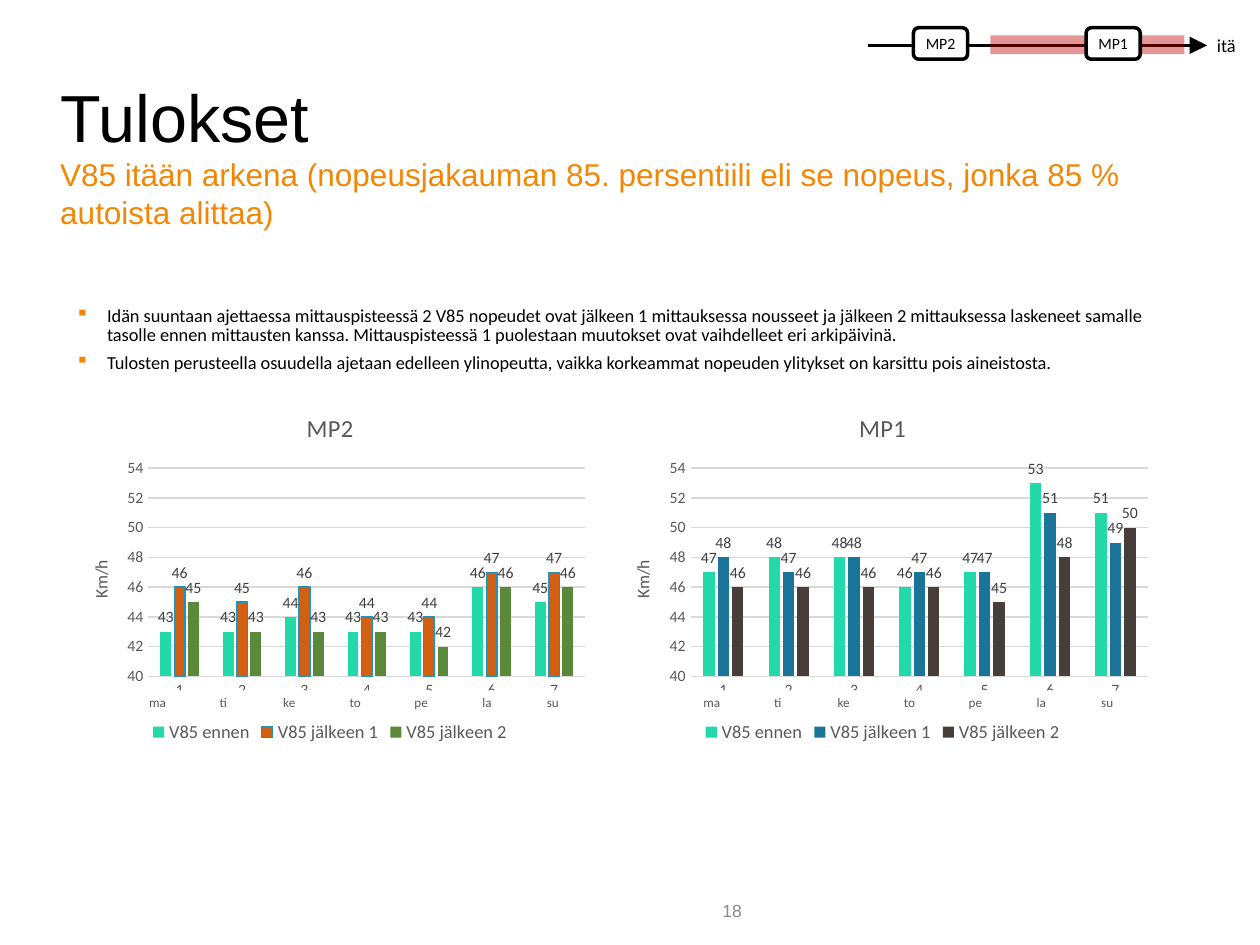
from lxml.etree import SubElement
from pptx import Presentation
from pptx.chart.data import CategoryChartData
from pptx.dml.color import RGBColor
from pptx.enum.chart import XL_CHART_TYPE as ChartType
from pptx.enum.chart import XL_LABEL_POSITION as LabelPosition
from pptx.enum.chart import XL_LEGEND_POSITION as LegendPosition
from pptx.enum.chart import XL_TICK_MARK as TickMark
from pptx.enum.shapes import MSO_CONNECTOR as Connector
from pptx.enum.shapes import MSO_SHAPE as Shape
from pptx.enum.text import MSO_ANCHOR as Anchor
from pptx.enum.text import PP_ALIGN as Align
from pptx.oxml.ns import qn
from pptx.util import Inches, Pt

COLORS = {
    "black": "000000", "white": "FFFFFF", "orange": "F28705", "red": "C00000",
    "number": "898989", "axis": "595959", "label": "404040", "grid": "D9D9D9",
    "mint": "23D9AA", "rust": "D26012", "green": "5A8A39",
    "blue": "1A7599", "brown": "473D39", "outline": "2192BF",
}
RGB = {name: RGBColor.from_string(value) for name, value in COLORS.items()}
CELL = Inches(0.1)  # the slide is a grid of 100 columns and 75 rows


def grid(*cells):
    return [round(cell * CELL) for cell in cells]


def style(font, size, color, name="Calibri"):
    font.size, font.name, font.bold = Pt(size), name, False
    font.color.rgb = RGB[color]


deck = Presentation()
deck.slide_width, deck.slide_height = grid(100, 75)
page = deck.slides.add_slide(deck.slide_layouts[6])
shapes = page.shapes

# Heading
heading = shapes.add_textbox(*grid(3.8, 5.8, 87, 12)).text_frame
heading.word_wrap = True
heading.margin_top = grid(0.2)[0]
para = heading.paragraphs[0]
para.text = ("Tulokset\vV85 itään arkena (nopeusjakauman 85. persentiili "
             "eli se nopeus, jonka 85 % autoista alittaa)")
for span, size, color in zip(para.runs, (38, 18), ("black", "orange")):
    style(span.font, size, color, "Arial")

# Page number
number = shapes.add_textbox(*grid(49.9, 70.3, 16.4, 4)).text_frame
number.text = "18"
number.vertical_anchor = Anchor.MIDDLE
number.paragraphs[0].alignment = Align.CENTER
style(number.paragraphs[0].runs[0].font, 10, "number", "Arial")

# Road with the two measuring points
road = shapes.add_connector(Connector.STRAIGHT, *grid(68.9, 3.6, 95.8, 3.6))
road.line.color.rgb = RGB["black"]
road.line.width = Pt(1.5)
SubElement(road.line._get_or_add_ln(), qn("a:tailEnd"), type="triangle", w="lg", len="lg")
SubElement(road._element.spPr, qn("a:effectLst"))

stretch = shapes.add_shape(Shape.RECTANGLE, *grid(78.6, 2.8, 15.4, 1.5))
stretch.shadow.inherit = False
stretch.fill.solid()
stretch.fill.fore_color.rgb = RGB["red"]
SubElement(stretch._element.spPr.find(".//" + qn("a:srgbClr")), qn("a:alpha"), val="41000")
stretch.line.fill.background()

for name, left in (("MP2", 72.5), ("MP1", 86.2)):
    point = shapes.add_shape(Shape.ROUNDED_RECTANGLE, *grid(left, 2.2, 4.3, 2.5))
    point.shadow.inherit = False
    point.fill.solid()
    point.fill.fore_color.rgb = RGB["white"]
    point.line.color.rgb = RGB["black"]
    point.line.width = Pt(2)
    frame = point.text_frame
    frame.margin_left, frame.margin_top, frame.margin_right, frame.margin_bottom = grid(
        0.7, 0.4, 0.7, 0.4)
    frame.vertical_anchor = Anchor.MIDDLE
    frame.text = name
    frame.paragraphs[0].alignment = Align.CENTER
    style(frame.paragraphs[0].runs[0].font, 9, "black")

direction = shapes.add_textbox(*grid(95.6, 2.2, 3.5, 2.8)).text_frame
direction.word_wrap = False
direction.text = "itä"
style(direction.paragraphs[0].runs[0].font, 10.5, "black")

# Findings
findings = [
    "Idän suuntaan ajettaessa mittauspisteessä 2 V85 nopeudet ovat jälkeen 1 "
    "mittauksessa nousseet ja jälkeen 2 mittauksessa laskeneet samalle tasolle "
    "ennen mittausten kanssa. Mittauspisteessä 1 puolestaan muutokset ovat "
    "vaihdelleet eri arkipäivinä.",
    "Tulosten perusteella osuudella ajetaan edelleen ylinopeutta, vaikka "
    "korkeammat nopeuden ylitykset on karsittu pois aineistosta.",
]
frame = shapes.add_textbox(*grid(5.3, 23.9, 89.5, 5.9)).text_frame
frame.word_wrap = True
frame.margin_left, frame.margin_top, frame.margin_right, frame.margin_bottom = grid(
    0.7, 0.4, 0.7, 0.4)
for index, finding in enumerate(findings):
    para = frame.add_paragraph() if index else frame.paragraphs[0]
    para.text = finding
    para.line_spacing = 0.9
    para.space_after = Pt(4.5)
    props = para._p.get_or_add_pPr()
    indent = grid(2.5)[0]
    props.set("marL", str(indent))
    props.set("indent", str(-indent))
    SubElement(SubElement(props, qn("a:buClr")), qn("a:srgbClr"), val=COLORS["orange"])
    SubElement(props, qn("a:buChar"), char="▪")
    style(para.runs[0].font, 10.5, "black")

# Charts: title, left, width, left of the day strip, values and colours by series
SERIES = ("V85 ennen", "V85 jälkeen 1", "V85 jälkeen 2")
DAYS = ("ma", "ti", "ke", "to", "pe", "la", "su")
CHARTS = [
    ("MP1", 48.1, 43.9, 54.8,
     ((47, 48, 48, 46, 47, 53, 51), (48, 47, 48, 47, 47, 51, 49), (46, 46, 46, 46, 45, 48, 50)),
     ("mint", "blue", "brown")),
    ("MP2", 5.1, 42.2, 10.8,
     ((43, 43, 44, 43, 43, 46, 45), (46, 45, 46, 44, 44, 47, 47), (45, 43, 43, 43, 42, 46, 46)),
     ("mint", "rust", "green")),
]
for title, left, width, strip_left, values, colors in CHARTS:
    data = CategoryChartData(number_format="0")
    data.categories = [str(day) for day in range(1, len(DAYS) + 1)]
    for name, speeds in zip(SERIES, values):
        data.add_series(name, speeds)
    chart = shapes.add_chart(
        ChartType.COLUMN_CLUSTERED, *grid(left, 31.2, width, 28.2), data).chart
    style(chart.font, 10, "black")
    chart.has_title = True
    chart.chart_title.text_frame.text = title
    style(chart.chart_title.text_frame.paragraphs[0].runs[0].font, 14, "axis")
    chart.has_legend = True
    chart.legend.position = LegendPosition.BOTTOM
    chart.legend.include_in_layout = False
    style(chart.legend.font, 10.5, "axis")

    days, speed = chart.category_axis, chart.value_axis
    for axis in (days, speed):
        axis.major_tick_mark = axis.minor_tick_mark = TickMark.NONE
        style(axis.tick_labels.font, 9, "axis")
    days.format.line.color.rgb = RGB["grid"]
    days.format.line.width = Pt(0.75)
    speed.minimum_scale, speed.maximum_scale, speed.major_unit = 40, 54, 2
    speed.format.line.fill.background()
    speed.major_gridlines.format.line.color.rgb = RGB["grid"]
    speed.major_gridlines.format.line.width = Pt(0.75)
    speed.axis_title.text_frame.text = "Km/h"
    style(speed.axis_title.text_frame.paragraphs[0].runs[0].font, 10, "axis")

    plot = chart.plots[0]
    plot.gap_width, plot.overlap, plot.vary_by_categories = 219, -27, False
    for series, color in zip(plot.series, colors):
        series.invert_if_negative = False
        series.format.fill.solid()
        series.format.fill.fore_color.rgb = RGB[color]
        if color == "rust":
            series.format.line.color.rgb = RGB["outline"]
            series.format.line.width = Pt(0.75)
        labels = series.data_labels
        labels.show_value = True
        labels.position = LabelPosition.OUTSIDE_END
        style(labels.font, 9, "label")

# Day names on a white strip over the category numbers
for _, _, _, strip_left, _, _ in CHARTS:
    group = shapes.add_group_shape().shapes
    strip = group.add_shape(Shape.RECTANGLE, *grid(strip_left, 54.8, 34.8, 2.1))
    strip.shadow.inherit = False
    strip.fill.solid()
    strip.fill.fore_color.rgb = RGB["white"]
    strip.line.fill.background()
    for index, day in enumerate(DAYS):
        frame = group.add_textbox(
            *grid(strip_left + 5.23 * index, 54.6, 3.4, 2.3)).text_frame
        frame.word_wrap = False
        frame.margin_left = frame.margin_right = 0
        frame.text = day
        frame.paragraphs[0].alignment = Align.CENTER
        style(frame.paragraphs[0].runs[0].font, 7.5, "axis")

deck.save("out.pptx")
